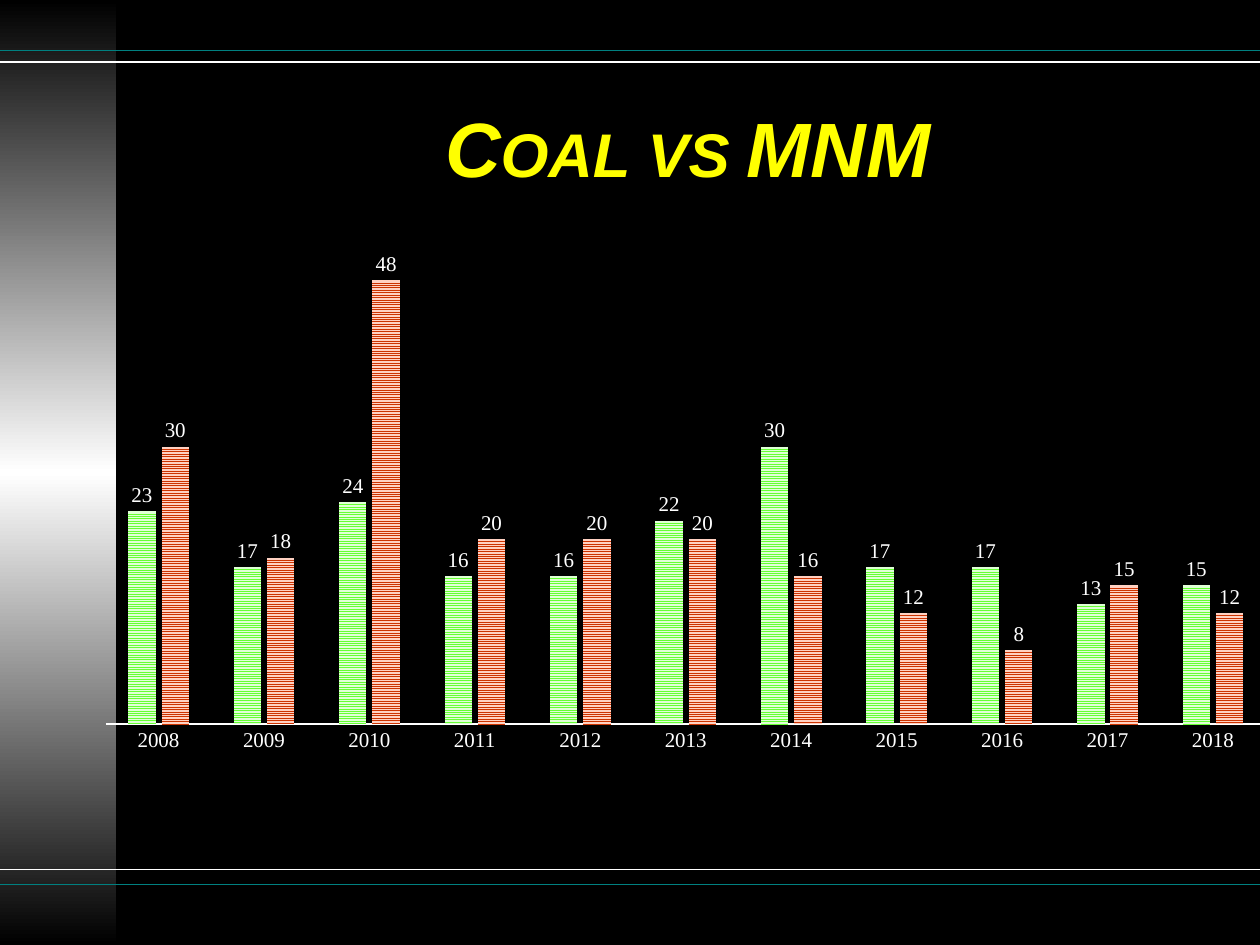
from copy import deepcopy

from lxml import etree
from pptx import Presentation
from pptx.chart.data import CategoryChartData
from pptx.dml.color import RGBColor
from pptx.enum.chart import XL_CHART_TYPE, XL_LABEL_POSITION, XL_TICK_MARK
from pptx.enum.dml import MSO_PATTERN
from pptx.enum.shapes import MSO_CONNECTOR, MSO_SHAPE
from pptx.enum.text import MSO_ANCHOR, PP_ALIGN
from pptx.oxml import parse_xml
from pptx.oxml.ns import nsdecls, qn
from pptx.util import Inches, Pt

COLUMNS = XL_CHART_TYPE.COLUMN_CLUSTERED
STRIPES = MSO_PATTERN.NARROW_HORIZONTAL
NO_TICKS = XL_TICK_MARK.NONE
ABOVE_BAR = XL_LABEL_POSITION.OUTSIDE_END

COLORS = {
    "black": "000000", "white": "FFFFFF", "teal": "008080", "yellow": "FFFF00",
    "green": "66FF33", "pale green": "E0FFD6",
    "red": "CC3300", "pale red": "FFD1C2",
}
BAND_WIDTH = 0.92
YEARS = [str(year) for year in range(2008, 2019)]
SERIES = {
    "MNM": ([23, 17, 24, 16, 16, 22, 30, 17, 17, 13, 15], "green"),
    "COAL": ([30, 18, 48, 20, 20, 20, 16, 12, 8, 15, 12], "red"),
}


def color(name):
    return RGBColor.from_string(COLORS[name])


def style_font(font, size, color_name="white", typeface="Times New Roman"):
    font.size = Pt(size)
    font.name = typeface
    font.color.rgb = color(color_name)


presentation = Presentation()
presentation.slide_width = Inches(10)
presentation.slide_height = Inches(7.5)
slide = presentation.slides.add_slide(presentation.slide_layouts[5])
slide.background.fill.solid()
slide.background.fill.fore_color.rgb = color("black")

# Side band, fading black to white to black
band = slide.shapes.add_shape(
    MSO_SHAPE.RECTANGLE, 0, 0, Inches(BAND_WIDTH), presentation.slide_height)
band.shadow.inherit = False
band.line.fill.background()
band.fill.gradient()
band.fill.gradient_angle = 90
stop_list = band._element.spPr.find(".//" + qn("a:gsLst"))
stop_list.append(deepcopy(stop_list[0]))
for stop, position, name in zip(
        band.fill.gradient_stops, (0, 0.5, 1), ("black", "white", "black")):
    stop.position = position
    stop.color.rgb = color(name)

# Rules across the top and bottom
for top, name in ((0.4, "teal"), (0.49, "white"), (6.9, "white"), (7.02, "teal")):
    rule = slide.shapes.add_connector(
        MSO_CONNECTOR.STRAIGHT, 0, Inches(top), presentation.slide_width, Inches(top))
    rule.line.color.rgb = color(name)
    rule.line.width = Pt(1)
    etree.SubElement(rule._element.spPr, qn("a:effectLst"))

# Chart
chart_data = CategoryChartData()
chart_data.categories = YEARS
for name, (values, _) in SERIES.items():
    chart_data.add_series(name, values)
chart = slide.shapes.add_chart(
    COLUMNS, Inches(0.83), Inches(1.17), Inches(9.54), Inches(5.33), chart_data).chart
chart.has_title = False
chart.has_legend = False
style_font(chart.font, 10)

chart.value_axis.visible = False
chart.value_axis.has_major_gridlines = False
chart.value_axis.minimum_scale = 0
chart.value_axis.maximum_scale = 60

category_axis = chart.category_axis
category_axis.major_tick_mark = NO_TICKS
category_axis.minor_tick_mark = NO_TICKS
category_axis.format.line.color.rgb = color("white")
category_axis.format.line.width = Pt(1.5)
style_font(category_axis.tick_labels.font, 12)

plot = chart.plots[0]
plot.gap_width = 164
plot.overlap = -22
plot.vary_by_categories = False
for series in plot.series:
    stripe = SERIES[series.name][1]
    fill = series.format.fill
    fill.patterned()
    fill.pattern = STRIPES
    fill.fore_color.rgb = color(stripe)
    fill.back_color.rgb = color("pale " + stripe)
    labels = series.data_labels
    labels.show_value = True
    labels.position = ABOVE_BAR
    style_font(labels.font, 12)

# Plot area as shares of the chart
plot_area = chart._chartSpace.chart.plotArea
for old_layout in plot_area.findall(qn("c:layout")):
    plot_area.remove(old_layout)
shares = "".join(
    f'<c:{tag} val="{value}"/>' for tag, value in (
        ("layoutTarget", "inner"), ("xMode", "edge"), ("yMode", "edge"),
        ("x", 0), ("y", 0.033), ("w", 0.966), ("h", 0.826)))
plot_area.insert(0, parse_xml(
    f'<c:layout {nsdecls("c")}><c:manualLayout>{shares}</c:manualLayout></c:layout>'))

# Title
title = slide.shapes.title
title.left, title.top = Inches(BAND_WIDTH), Inches(0.58)
title.width, title.height = Inches(10 - BAND_WIDTH), Inches(1.17)
title.text_frame.text = "Coal vs MNM"
title.text_frame.vertical_anchor = MSO_ANCHOR.MIDDLE
paragraph = title.text_frame.paragraphs[0]
paragraph.alignment = PP_ALIGN.CENTER
style_font(paragraph.font, 44, "yellow", "Arial")
paragraph.font.bold = True
paragraph.font.italic = True
paragraph.runs[0]._r.get_or_add_rPr().set("cap", "small")

presentation.save("out.pptx")
